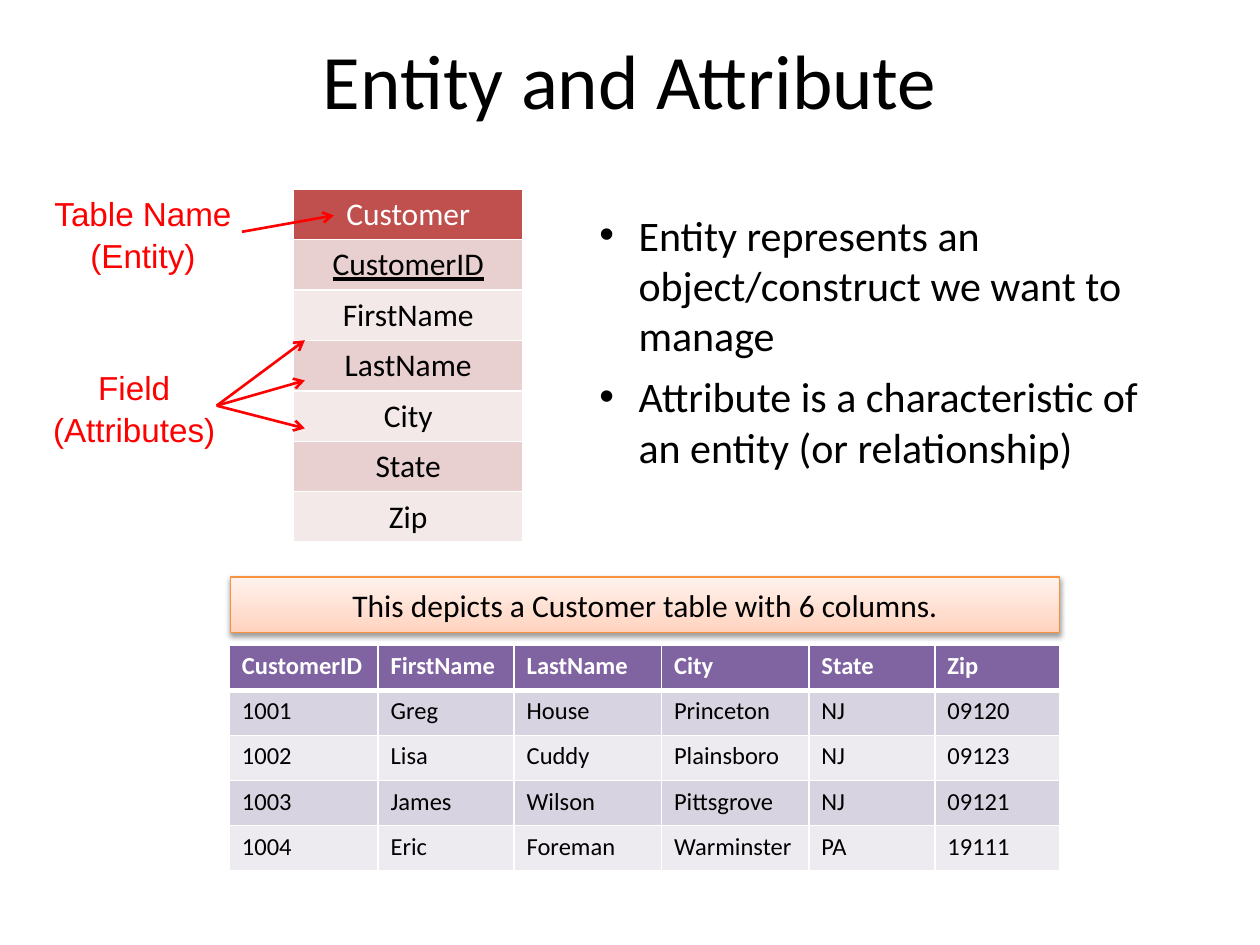
from dataclasses import dataclass
from lxml.etree import SubElement as Sub
from pptx import Presentation
from pptx.dml.color import RGBColor as RGB
from pptx.enum.shapes import MSO_CONNECTOR as Link, MSO_SHAPE as Kind
from pptx.enum.text import MSO_ANCHOR as Anchor, PP_ALIGN as Align
from pptx.oxml.ns import qn
from pptx.util import Inches, Pt


@dataclass(frozen=True)
class Theme:
    """Colours, fonts and type sizes of the slide."""
    ink: str = "000000"
    paper: str = "FFFFFF"
    mark: str = "FF0000"
    edge: str = "F69240"
    glow: tuple = ((0, "FFD2BD"), (35, "FFDED0"), (100, "FFF2ED"))
    reds: tuple = ("C0504D", "E8D0D0", "F4E9E9")
    plums: tuple = ("8064A2", "D8D3E0", "EDEAF0")
    body: str = "Calibri"
    sans: str = "Arial"
    title: int = 44
    point: int = 24
    note: int = 19
    field: int = 18
    data: int = 14


T = Theme()
FIELDS = ["CustomerID", "FirstName", "LastName", "City", "State", "Zip"]
PEOPLE = [
    ["1001", "Greg", "House", "Princeton", "NJ", "09120"],
    ["1002", "Lisa", "Cuddy", "Plainsboro", "NJ", "09123"],
    ["1003", "James", "Wilson", "Pittsgrove", "NJ", "09121"],
    ["1004", "Eric", "Foreman", "Warminster", "PA", "19111"],
]
POINTS = ["Entity represents an object/construct we want to manage",
          "Attribute is a characteristic of an entity (or relationship)"]


def place(box):
    """Turn a box in inches into lengths."""
    return [Inches(v) for v in box]


def node(parent, tag, **attrs):
    """Append a drawing element with its attributes."""
    return Sub(parent, qn("a:" + tag), {k: str(v) for k, v in attrs.items()})


def tint(parent, color):
    """Append an RGB colour element."""
    return node(parent, "srgbClr", val=color)


def write(frame, *lines, size=T.field, color=T.ink, font=T.body, bold=False,
          under=False, align=Align.LEFT, after=0, space=None, bullet=None):
    """Fill a text frame with one paragraph per line."""
    for i, line in enumerate(lines):
        para = frame.add_paragraph() if i else frame.paragraphs[0]
        para.alignment, para.space_after = align, Pt(after)
        if space:
            para.line_spacing = space
        if bullet:
            props = para._p.get_or_add_pPr()
            props.set("marL", str(Inches(0.31)))
            props.set("indent", str(Inches(-0.31)))
            node(props, "buFont", typeface=T.sans)
            node(props, "buChar", char=bullet)
        run = para.add_run()
        run.text = line
        face = run.font
        face.name, face.size, face.bold, face.underline = font, Pt(size), bold, under
        face.color.rgb = RGB.from_string(color)


def label(slide, box, *lines, inset=None, wrap=True, anchor=Anchor.TOP, **look):
    """Add a text box."""
    shape = slide.shapes.add_textbox(*place(box))
    frame = shape.text_frame
    frame.word_wrap, frame.vertical_anchor = wrap, anchor
    if inset is not None:
        frame.margin_left = frame.margin_right = Inches(inset)
        frame.margin_top = frame.margin_bottom = Inches(inset)
    write(frame, *lines, **look)
    return shape


def arrow(slide, start, end, source=None):
    """Draw a red arrow, joined to the right side of a source if given."""
    line = slide.shapes.add_connector(Link.STRAIGHT, *place(start + end))
    if source is not None:
        line.begin_connect(source, 3)
    line.line.color.rgb = RGB.from_string(T.mark)
    line.line.width = Pt(1.5)
    node(line.line._get_or_add_ln(), "tailEnd", type="arrow")
    node(line._element.spPr, "effectLst")


def rule(cell, **widths):
    """Set the cell borders, one width in points per side."""
    props = cell._tc.get_or_add_tcPr()
    for side, width in widths.items():
        line = node(props, "ln" + side, w=Pt(width))
        tint(node(line, "solidFill"), T.paper)


def grid(slide, box, rows, widths, fills, size, head=1, bold=False,
         key=None, align=Align.LEFT):
    """Add a banded table with a coloured header row."""
    table = slide.shapes.add_table(len(rows), len(widths), *place(box)).table
    for col, width in zip(table.columns, widths):
        col.width = Inches(width)
    for r, row in enumerate(rows):
        table.rows[r].height = Inches(box[3] / len(rows))
        fill = fills[2 - r % 2] if r else fills[0]
        for c, word in enumerate(row):
            cell = table.cell(r, c)
            rule(cell, L=1, R=1, T=head if r == 1 else 1, B=1 if r else head)
            cell.fill.solid()
            cell.fill.fore_color.rgb = RGB.from_string(fill)
            write(cell.text_frame, word, size=size, align=align,
                  color=T.ink if r else T.paper,
                  bold=bold and r == 0, under=r == key)


def entity(slide, box):
    """Place the entity table with its labels and arrows."""
    x, y, w, h = box
    look = dict(size=T.note, color=T.mark, font=T.sans, align=Align.CENTER,
                space=1.05, inset=0, wrap=False)
    left = x + 1.92
    grid(slide, (left, y, w - 1.92, h), [["Customer"]] + [[f] for f in FIELDS],
         [w - 1.92], T.reds, T.field, key=1, align=Align.CENTER)
    label(slide, (x + 0.01, y + 0.02, 1.43, 0.64), "Table Name", "(Entity)", **look)
    arrow(slide, (x + 1.51, y + 0.34), (x + 2.24, y + 0.21))
    field = label(slide, (x, y + 1.4, 1.31, 0.64), "Field", "(Attributes)", **look)
    for drop in (1.9, 1.52, 1.2):
        arrow(slide, (x + 1.31, y + 1.72), (left + 0.09, y + drop), field)


def banner(slide, box, words):
    """Place the caption bar with its gradient and soft shadow."""
    bar = slide.shapes.add_shape(Kind.RECTANGLE, *place(box))
    bar.shadow.inherit = False
    bar.fill.gradient()
    bar.fill.gradient_angle = 90
    stops = bar._element.spPr.find(".//" + qn("a:gsLst"))
    stops.clear()
    for pos, color in T.glow:
        tint(node(stops, "gs", pos=pos * 1000), color)
    bar.line.color.rgb = RGB.from_string(T.edge)
    bar.line.width = Pt(0.75)
    shade = node(bar._element.spPr.find(qn("a:effectLst")), "outerShdw",
                 blurRad=Pt(3.1), dist=Pt(1.6), dir=5400000, rotWithShape=0)
    node(tint(shade, T.ink), "alpha", val=38000)
    bar.text_frame.vertical_anchor = Anchor.MIDDLE
    write(bar.text_frame, words, align=Align.CENTER)


def sample(slide, box):
    """Place the caption above the table of customer rows."""
    x, y, w, h = box
    banner(slide, (x + 0.01, y, w - 0.01, 0.44),
           "This depicts a Customer table with 6 columns.")
    grid(slide, (x, y + 0.54, w, h - 0.54), [FIELDS] + PEOPLE,
         [1.18, 1.08, 1.17, 1.17, 1, 0.99], T.plums, T.data, head=3, bold=True)


def main():
    """Build and save the slide."""
    deck = Presentation()
    deck.slide_width, deck.slide_height = Inches(10), Inches(7.5)
    slide = deck.slides.add_slide(deck.slide_layouts[6])
    label(slide, (0.5, 0, 9, 1.25), "Entity and Attribute", size=T.title,
          align=Align.CENTER, anchor=Anchor.MIDDLE)
    label(slide, (4.66, 1.61, 4.5, 2.2), *POINTS, size=T.point, after=6, bullet="•")
    entity(slide, (0.41, 1.5, 3.74, 2.8))
    sample(slide, (1.82, 4.58, 6.59, 2.33))
    deck.save("out.pptx")


if __name__ == "__main__":
    main()
